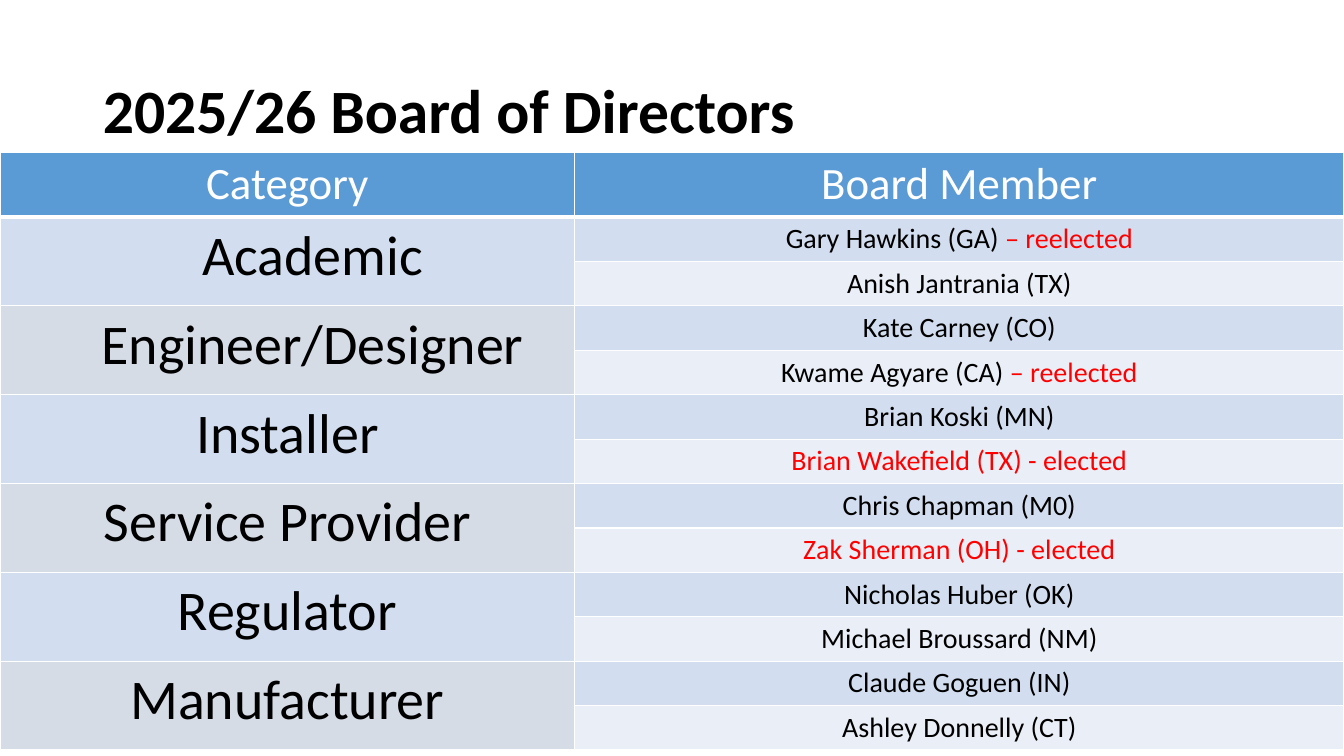
from pptx import Presentation
from pptx.dml.color import RGBColor
from pptx.enum.text import MSO_ANCHOR, PP_ALIGN
from pptx.oxml.ns import qn
from pptx.util import Inches, Pt
from lxml.etree import SubElement

COLORS = {
    "black": "000000", "white": "FFFFFF", "red": "FF0000", "header": "5B9BD5",
    "blue": "D2DEEF", "pale": "EAEFF7", "gray": "D6DCE5",
}
BOARD = [
    ("Academic", 0.5, [("Gary Hawkins (GA)", " – reelected"), ("Anish Jantrania (TX)", "")]),
    ("Engineer/Designer", 0.5, [("Kate Carney (CO)", ""), ("Kwame Agyare (CA) ", "– reelected")]),
    ("Installer", 0, [("Brian Koski (MN)", ""), ("", "Brian Wakefield (TX) - elected")]),
    ("Service Provider", 0, [("Chris Chapman (M0)", ""), ("", "Zak Sherman (OH) - elected")]),
    ("Regulator", 0, [("Nicholas Huber (OK)", ""), ("Michael Broussard (NM)", "")]),
    ("Manufacturer", 0, [("Claude Goguen (IN)", ""), ("Ashley Donnelly (CT)", "")]),
]


def color(name):
    """Return the named colour."""
    return RGBColor.from_string(COLORS[name])


def add_text(para, text, size=20, tint="black", bold=False):
    """Add a formatted span to a paragraph."""
    span = para.add_run()
    span.text = text
    span.font.name = "Calibri"
    span.font.size = Pt(size)
    span.font.bold = bold
    span.font.color.rgb = color(tint)


def style_cell(cell, fill, bottom=1):
    """Give a cell white borders and a solid fill."""
    properties = cell._tc.get_or_add_tcPr()
    for side, width in (("L", 1), ("R", 1), ("T", 1), ("B", bottom)):
        line = SubElement(properties, qn(f"a:ln{side}"), w=str(Pt(width)))
        solid = SubElement(line, qn("a:solidFill"))
        SubElement(solid, qn("a:srgbClr"), val=COLORS["white"])
    cell.fill.solid()
    cell.fill.fore_color.rgb = color(fill)


def center_para(cell, indent=0):
    """Return the cell's paragraph, centred and indented."""
    para = cell.text_frame.paragraphs[0]
    para.alignment = PP_ALIGN.CENTER
    if indent:
        para.level = 1
        para._p.get_or_add_pPr().set("marL", str(Inches(indent)))
    return para


def add_title(page, text):
    """Place and fill the slide title."""
    title = page.shapes.title
    title.left, title.top = Inches(0.92), Inches(0.4)
    title.width, title.height = Inches(11.5), Inches(1.45)
    title.text_frame.vertical_anchor = MSO_ANCHOR.MIDDLE
    para = title.text_frame.paragraphs[0]
    para.alignment = PP_ALIGN.LEFT
    para.line_spacing = 0.9
    add_text(para, text, size=44, bold=True)


def add_board_table(page):
    """Add the table of categories and their two members each."""
    rows = 1 + 2 * len(BOARD)
    frame = page.shapes.add_table(
        rows, 2, Inches(0), Inches(1.51), Inches(13.33), Inches(0.41 * rows))
    table = frame.table
    table.first_row = table.horz_banding = False
    table.columns[0].width, table.columns[1].width = Inches(5.7), Inches(7.63)
    for column, heading in enumerate(("Category", "Board Member")):
        cell = table.cell(0, column)
        style_cell(cell, "header", bottom=3)
        add_text(center_para(cell), heading, size=32, tint="white")
    for index, (category, indent, members) in enumerate(BOARD):
        top = 1 + 2 * index
        table.cell(top, 0).merge(table.cell(top + 1, 0))
        for offset, (name, election) in enumerate(members):
            style_cell(table.cell(top + offset, 0), ("blue", "gray")[index % 2])
            cell = table.cell(top + offset, 1)
            style_cell(cell, ("blue", "pale")[offset])
            para = center_para(cell)
            for text, tint in ((name, "black"), (election, "red")):
                if text:
                    add_text(para, text, tint=tint)
        add_text(center_para(table.cell(top, 0), indent), category, size=40)


def main():
    """Build and save the slide."""
    deck = Presentation()
    deck.slide_width, deck.slide_height = Inches(13.33), Inches(7.5)
    page = deck.slides.add_slide(deck.slide_layouts[5])
    add_title(page, "2025/26 Board of Directors")
    add_board_table(page)
    deck.save("out.pptx")


if __name__ == "__main__":
    main()
